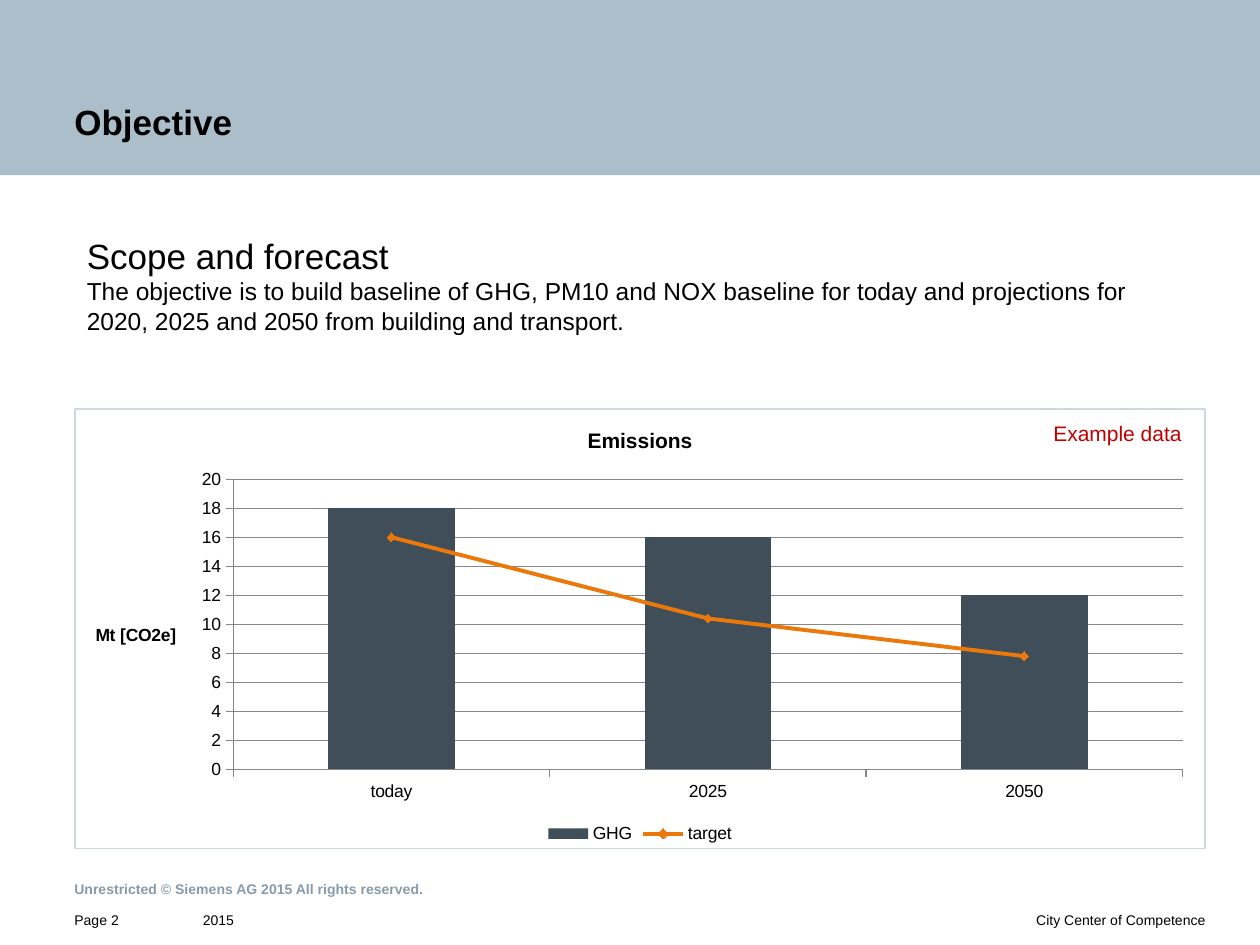
from lxml.etree import SubElement
from pptx import Presentation
from pptx.chart.data import CategoryChartData
from pptx.dml.color import RGBColor
from pptx.enum.chart import XL_CHART_TYPE, XL_LEGEND_POSITION, XL_MARKER_STYLE, XL_TICK_MARK
from pptx.enum.shapes import MSO_SHAPE
from pptx.enum.text import MSO_ANCHOR, PP_ALIGN
from pptx.oxml import parse_xml
from pptx.oxml.ns import nsdecls, qn
from pptx.util import Inches, Pt

COLORS = {
    "band": "ADBECB", "text": "000000", "notice": "879BAA", "example": "C00000",
    "ghg": "3F4E59", "target": "EB780A", "border": "CED8E0", "grid": "878787",
}
FONT = "Arial"

deck = Presentation()
deck.slide_width, deck.slide_height = Inches(10), Inches(7.5)
column, row = deck.slide_width / 100, deck.slide_height / 75
slide = deck.slides.add_slide(deck.slide_layouts[5])
margin, content_width = 5.9, 89.8
band_height = 13.9


def color(name):
    return RGBColor.from_string(COLORS[name])


def write(lines, box, holder=None, insets=(0, 0, 0, 0), ink="text", bold=False,
          align=PP_ALIGN.LEFT, anchor=MSO_ANCHOR.TOP, spacing=1.0):
    left, top, width, height = box
    holder = holder or slide.shapes.add_textbox(0, 0, 0, 0)
    holder.left, holder.width = int(left * column), int(width * column)
    holder.top, holder.height = int(top * row), int(height * row)
    frame = holder.text_frame
    frame.word_wrap = True
    frame.vertical_anchor = anchor
    frame.margin_left, frame.margin_top, frame.margin_right, frame.margin_bottom = map(Inches, insets)
    for index, (words, size) in enumerate(lines):
        paragraph = frame.add_paragraph() if index else frame.paragraphs[0]
        paragraph.text = words
        paragraph.alignment = align
        paragraph.line_spacing = spacing
        paragraph.font.name = FONT
        paragraph.font.size = Pt(size)
        paragraph.font.bold = bold
        paragraph.font.color.rgb = color(ink)


band = slide.shapes.add_shape(MSO_SHAPE.RECTANGLE, 0, 0, deck.slide_width, int(band_height * row))
band.shadow.inherit = False
band.fill.solid()
band.fill.fore_color.rgb = color("band")
band.line.fill.background()
slide.shapes.title.element.addprevious(band.element)

write([("Objective", 20)], (0, 0, 100, band_height), holder=slide.shapes.title,
      insets=(0.59, 0.43, 2.32, 0.26), bold=True, anchor=MSO_ANCHOR.BOTTOM)

write([("Unrestricted © Siemens AG 2015 All rights reserved.", 8)], (0, 67.4, 100, 4.7),
      insets=(0.59, 0.16, 2.32, 0), ink="notice", bold=True, anchor=MSO_ANCHOR.MIDDLE)
for words, left, width, inset_left, inset_right, align in [
    ("Page 2", 0, 15.2, 0.59, 0, PP_ALIGN.LEFT),
    ("2015", 0, 31, 1.61, 0, PP_ALIGN.LEFT),
    ("City Center of Competence", 29.5, 70.5, 0, 0.43, PP_ALIGN.RIGHT),
]:
    write([(words, 8)], (left, 72.2, width, 2.8), insets=(inset_left, 0, inset_right, 0.13),
          align=align, spacing=1.1)

emissions = CategoryChartData()
emissions.categories = ["today", "2025", "2050"]
emissions.add_series("GHG", [18, 16, 12])
emissions.add_series("target", [16, 10.4, 7.8])
chart = slide.shapes.add_chart(
    XL_CHART_TYPE.COLUMN_CLUSTERED, int(margin * column), int(32.4 * row),
    int(content_width * column), int(35 * row), emissions).chart
chart.font.name = FONT
chart.font.size = Pt(10)
chart.font.color.rgb = color("text")

bars = chart.plots[0]
bars.gap_width = 150
bars.vary_by_categories = False
plot_area = chart._chartSpace.chart.plotArea
bar_chart = plot_area.find(qn("c:barChart"))
line_chart = parse_xml(
    f'<c:lineChart {nsdecls("c")}><c:grouping val="standard"/><c:varyColors val="0"/></c:lineChart>')
target_series = bar_chart.findall(qn("c:ser"))[1]
for bar_setting in target_series.findall(qn("c:invertIfNegative")):
    target_series.remove(bar_setting)
line_chart.append(target_series)
SubElement(line_chart, qn("c:marker")).set("val", "1")
for axis_id in bar_chart.findall(qn("c:axId")):
    SubElement(line_chart, qn("c:axId")).set("val", axis_id.get("val"))
bar_chart.addnext(line_chart)

ghg, target = chart.plots[0].series[0], chart.plots[1].series[0]
ghg.format.fill.solid()
ghg.format.fill.fore_color.rgb = color("ghg")
target.smooth = False
target.format.line.color.rgb = color("target")
target.format.line.width = Pt(2.25)
target.marker.style = XL_MARKER_STYLE.DIAMOND
target.marker.size = 5
target.marker.format.fill.solid()
target.marker.format.fill.fore_color.rgb = color("target")
target.marker.format.line.color.rgb = color("target")

years, amounts = chart.category_axis, chart.value_axis
amounts.minimum_scale, amounts.maximum_scale, amounts.major_unit = 0, 20, 2
amounts.has_major_gridlines = True
for axis in (years, amounts):
    axis.major_tick_mark = XL_TICK_MARK.OUTSIDE
    axis.format.line.color.rgb = color("grid")
amounts.major_gridlines.format.line.color.rgb = color("grid")

chart.has_title = True
amounts.has_title = True
for heading, words, size in [(chart.chart_title, "Emissions", 12), (amounts.axis_title, "Mt [CO2e]", 10)]:
    heading.text_frame.text = words
    font = heading.text_frame.paragraphs[0].runs[0].font
    font.name, font.size, font.bold = FONT, Pt(size), True
    font.color.rgb = color("text")
amount_body = amounts.axis_title.text_frame._txBody.find(qn("a:bodyPr"))
amount_body.set("rot", "0")
amount_body.set("vert", "horz")

chart.has_legend = True
chart.legend.position = XL_LEGEND_POSITION.BOTTOM
chart.legend.include_in_layout = False

for old_layout in plot_area.findall(qn("c:layout")):
    plot_area.remove(old_layout)
plot_area.insert(0, parse_xml(
    f'<c:layout {nsdecls("c")}><c:manualLayout><c:layoutTarget val="inner"/>'
    '<c:xMode val="edge"/><c:yMode val="edge"/><c:x val="0.14"/><c:y val="0.16"/>'
    '<c:w val="0.84"/><c:h val="0.66"/></c:manualLayout></c:layout>'))
chart._chartSpace.chart.addnext(parse_xml(
    f'<c:spPr {nsdecls("c", "a")}><a:noFill/><a:ln w="9525"><a:solidFill>'
    f'<a:srgbClr val="{COLORS["border"]}"/></a:solidFill></a:ln></c:spPr>'))

write([("Scope and forecast", 20),
       ("The objective is to build baseline of GHG, PM10 and NOX baseline for today and projections "
        "for 2020, 2025 and 2050 from building and transport.", 14)],
      (margin, 18.1, content_width, 9.1), insets=(0.1, 0.05, 0.1, 0.05))
write([("Example data", 12)], (83.6, 33.2, 13.2, 2.2), ink="example", spacing=1.1)

deck.save("out.pptx")
